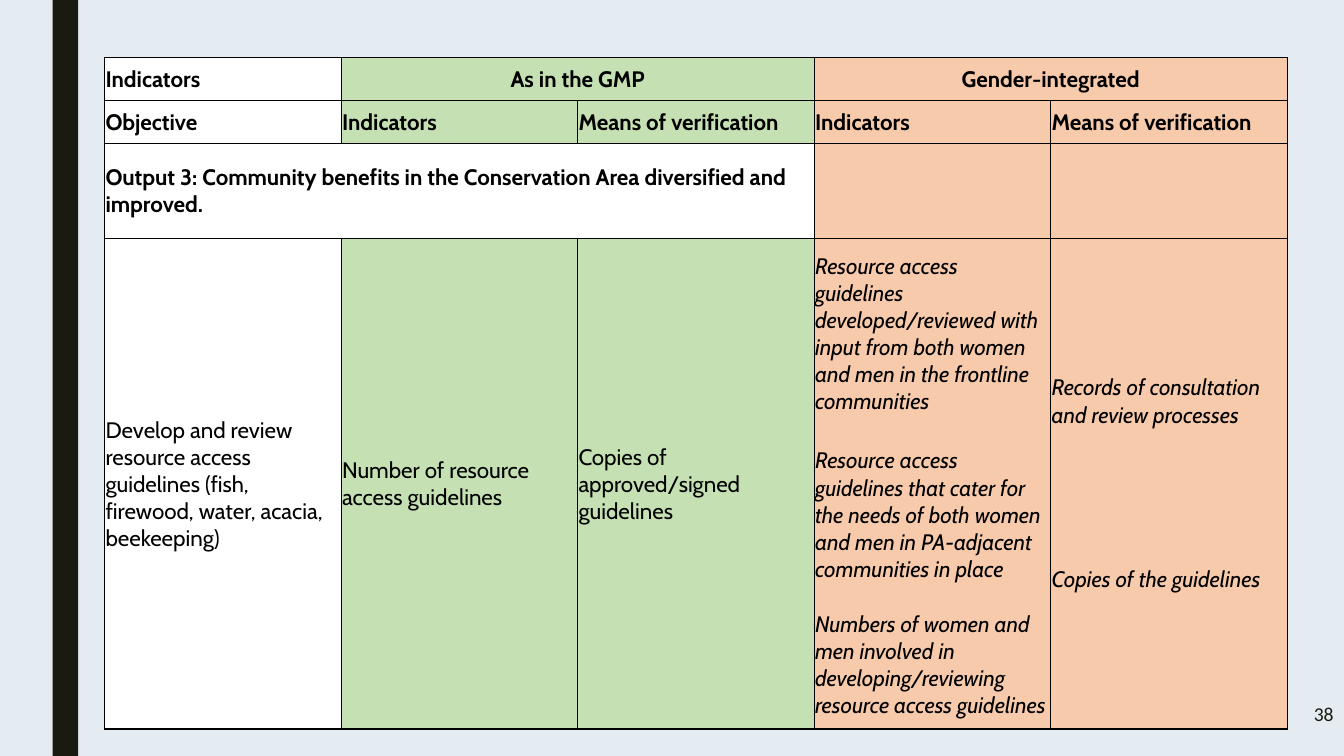
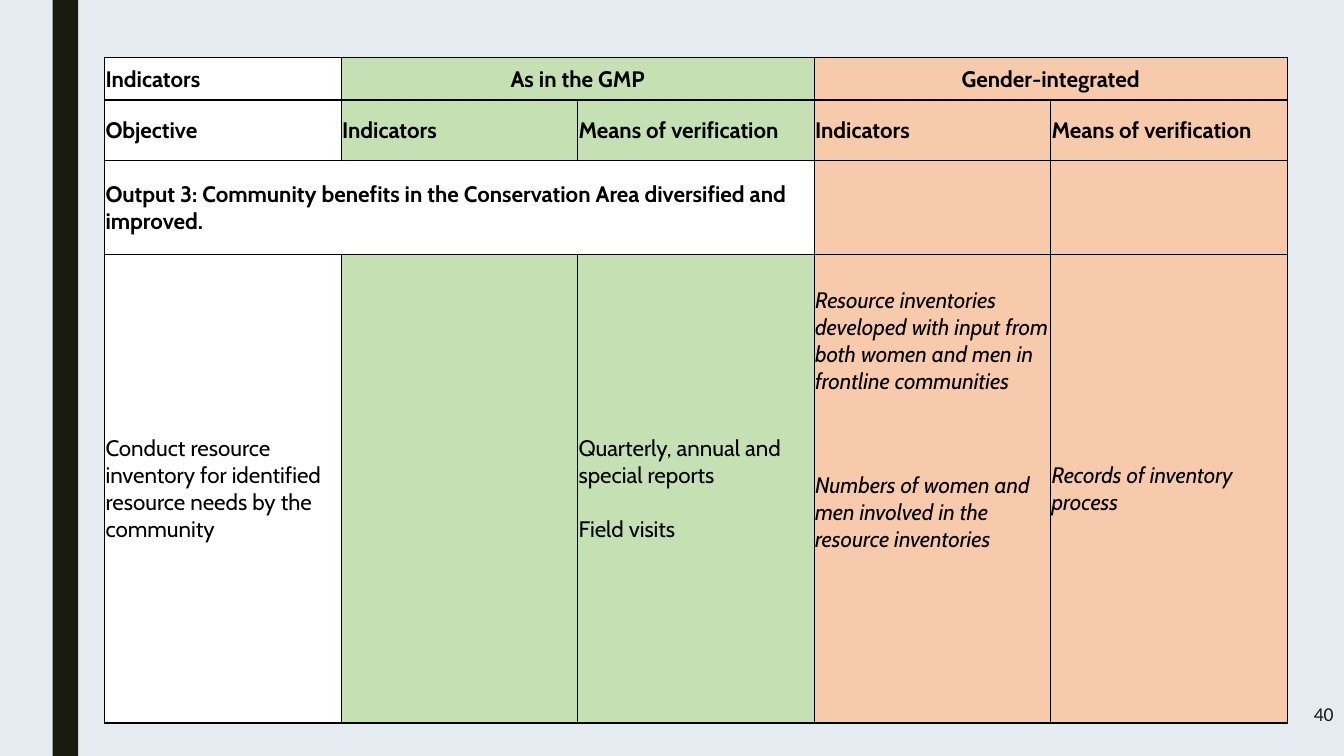
from dataclasses import dataclass

from lxml import etree
from pptx import Presentation
from pptx.dml.color import RGBColor
from pptx.enum.shapes import MSO_SHAPE
from pptx.enum.text import MSO_ANCHOR, PP_ALIGN
from pptx.oxml.ns import qn
from pptx.util import Cm, Pt

RECT = MSO_SHAPE.RECTANGLE
MIDDLE, BOTTOM = MSO_ANCHOR.MIDDLE, MSO_ANCHOR.BOTTOM
LEFT, CENTER, RIGHT = PP_ALIGN.LEFT, PP_ALIGN.CENTER, PP_ALIGN.RIGHT


@dataclass(frozen=True)
class Theme:
    back: str = "E4ECF1"
    dark: str = "191B0E"
    ink: str = "000000"
    white: str = "FFFFFF"
    green: str = "C5E0B3"
    peach: str = "F7CAAC"
    font: str = "Cabin"
    num_font: str = "Calibri"
    size: float = 16
    num_size: float = 14
    gap: float = 19.2
    line: float = 1


THEME = Theme()
COLS = 5
TASK = 3  # first row of the task block
END = 6
COL_FILLS = (THEME.white, THEME.green, THEME.green, THEME.peach, THEME.peach)

# Each entry: row, column, rows spanned, columns spanned, text, anchor
HEAD = [
    (0, 0, 1, 1, "Indicators", MIDDLE),
    (0, 1, 1, 2, "As in the GMP", MIDDLE),
    (0, 3, 1, 2, "Gender-integrated", MIDDLE),
    (1, 0, 1, 1, "Objective", MIDDLE),
    (1, 1, 1, 1, "Indicators", MIDDLE),
    (1, 2, 1, 1, "Means of verification", MIDDLE),
    (1, 3, 1, 1, "Indicators", MIDDLE),
    (1, 4, 1, 1, "Means of verification", MIDDLE),
    (2, 0, 1, 3, "Output 3: Community benefits in the Conservation Area "
     "diversified and improved.", MIDDLE),
]
ACCESS = [
    (3, 0, 3, 1, "Develop and review resource access guidelines "
     "(fish, firewood, water, acacia, beekeeping)", MIDDLE),
    (3, 1, 3, 1, "Number of resource access guidelines", MIDDLE),
    (3, 2, 3, 1, "Copies of approved/signed guidelines", MIDDLE),
    (3, 3, 1, 1, "Resource access guidelines developed/reviewed with input "
     "from both women and men in the frontline communities", MIDDLE),
    (4, 3, 1, 1, "Resource access guidelines that cater for the needs of both "
     "women and men in PA-adjacent communities in place", MIDDLE),
    (5, 3, 1, 1, "Numbers of women and men involved in developing/reviewing "
     "resource access guidelines", MIDDLE),
    (3, 4, 1, 1, "Records of consultation and review processes", BOTTOM),
    (4, 4, 2, 1, "Copies of the guidelines", MIDDLE),
]
STOCK = [
    (3, 0, 3, 1, "Conduct resource inventory for identified resource needs "
     "by the community", MIDDLE),
    (3, 1, 3, 1, "", MIDDLE),
    (3, 2, 3, 1, "Quarterly, annual and special reports\nField visits", MIDDLE),
    (3, 3, 1, 1, "Resource inventories developed with input from both women "
     "and men in frontline communities", MIDDLE),
    (4, 3, 1, 1, "Numbers of women and men involved in the resource "
     "inventories", MIDDLE),
    (3, 4, 3, 1, "Records of inventory process", MIDDLE),
]
PAGES = [
    ("38", (1.09, 1.08, 2.39, 4.79, 4.34, 3.23), ACCESS),
    ("40", (1.07, 1.52, 2.37, 4.35, 4.29, 3.17), STOCK),
]


def color(code):
    return RGBColor.from_string(code)


def style(para, font, size, ink, align, bold=False, italic=False):
    para.alignment = align
    for run in para.runs:
        face = run.font
        face.name, face.size = font, Pt(size)
        face.bold, face.italic = bold, italic
        face.color.rgb = color(ink)


def add_band(master, slide):
    """Draw the side band on a slide, then move it to the master."""
    band = slide.shapes.add_shape(RECT, Cm(1.33), 0, Cm(0.64), Cm(19.05))
    band.shadow.inherit = False
    band.fill.solid()
    band.fill.fore_color.rgb = color(THEME.dark)
    band.line.fill.background()
    band._element.nvSpPr.cNvPr.id = 99
    master.shapes._spTree.append(band._element)


def clear(layout):
    """Remove the layout's unused placeholders."""
    for holder in list(layout.placeholders):
        layout.shapes._spTree.remove(holder._element)


def add_number(slide, text):
    box = slide.shapes.add_textbox(Cm(31.34), Cm(16.94), Cm(2.52), Cm(2.11))
    frame = box.text_frame
    frame.word_wrap = True
    frame.vertical_anchor = MIDDLE
    frame.text = text
    style(frame.paragraphs[0], THEME.num_font, THEME.num_size, THEME.dark, RIGHT)


def set_edges(cell, row):
    """Rule a cell on all sides, but leave the task block open inside."""
    high = cell.span_height if cell.is_merge_origin else 1
    last = row + high
    sides = {"L": True, "R": True, "T": row <= TASK,
             "B": last <= TASK or last == END}
    props = cell._tc.get_or_add_tcPr()
    for side, shown in sides.items():
        edge = etree.SubElement(props, qn("a:ln" + side), w=str(Pt(THEME.line)))
        if shown:
            fill = etree.SubElement(edge, qn("a:solidFill"))
            etree.SubElement(fill, qn("a:srgbClr"), val=THEME.ink)
        else:
            etree.SubElement(edge, qn("a:noFill"))


def paint(cell, row, col):
    set_edges(cell, row)
    cell.margin_left = cell.margin_right = cell.margin_top = Cm(0.02)
    cell.margin_bottom = 0
    cell.fill.solid()
    plain = row == 2 and col < 3
    cell.fill.fore_color.rgb = color(THEME.white if plain else COL_FILLS[col])


def write(cell, row, col, text, anchor):
    cell.vertical_anchor = anchor
    cell.text_frame.text = text
    align = CENTER if row == 0 and col else LEFT
    for i, para in enumerate(cell.text_frame.paragraphs):
        style(para, THEME.font, THEME.size, THEME.ink, align,
              bold=row < TASK, italic=row >= TASK and col > 2)
        if i:
            para.space_before = Pt(THEME.gap)


def add_grid(slide, highs, items):
    shape = slide.shapes.add_table(END, COLS, Cm(2.64), Cm(1.45),
                                   Cm(29.8), Cm(sum(highs)))
    table = shape.table
    table.first_row = table.horz_banding = False
    for line, high in zip(table.rows, highs):
        line.height = Cm(high)
    for row, col, down, wide, text, anchor in items:
        cell = table.cell(row, col)
        if down * wide > 1:
            cell.merge(table.cell(row + down - 1, col + wide - 1))
        if text:
            write(cell, row, col, text, anchor)
    for row in range(END):
        for col in range(COLS):
            paint(table.cell(row, col), row, col)


def main():
    deck = Presentation()
    deck.slide_width, deck.slide_height = Cm(33.87), Cm(19.05)
    master = deck.slide_master
    master.background.fill.solid()
    master.background.fill.fore_color.rgb = color(THEME.back)
    blank = deck.slide_layouts[6]
    clear(blank)
    for number, highs, tasks in PAGES:
        slide = deck.slides.add_slide(blank)
        add_grid(slide, highs, HEAD + tasks)
        add_number(slide, number)
    add_band(master, deck.slides[0])
    deck.save("out.pptx")


if __name__ == "__main__":
    main()
